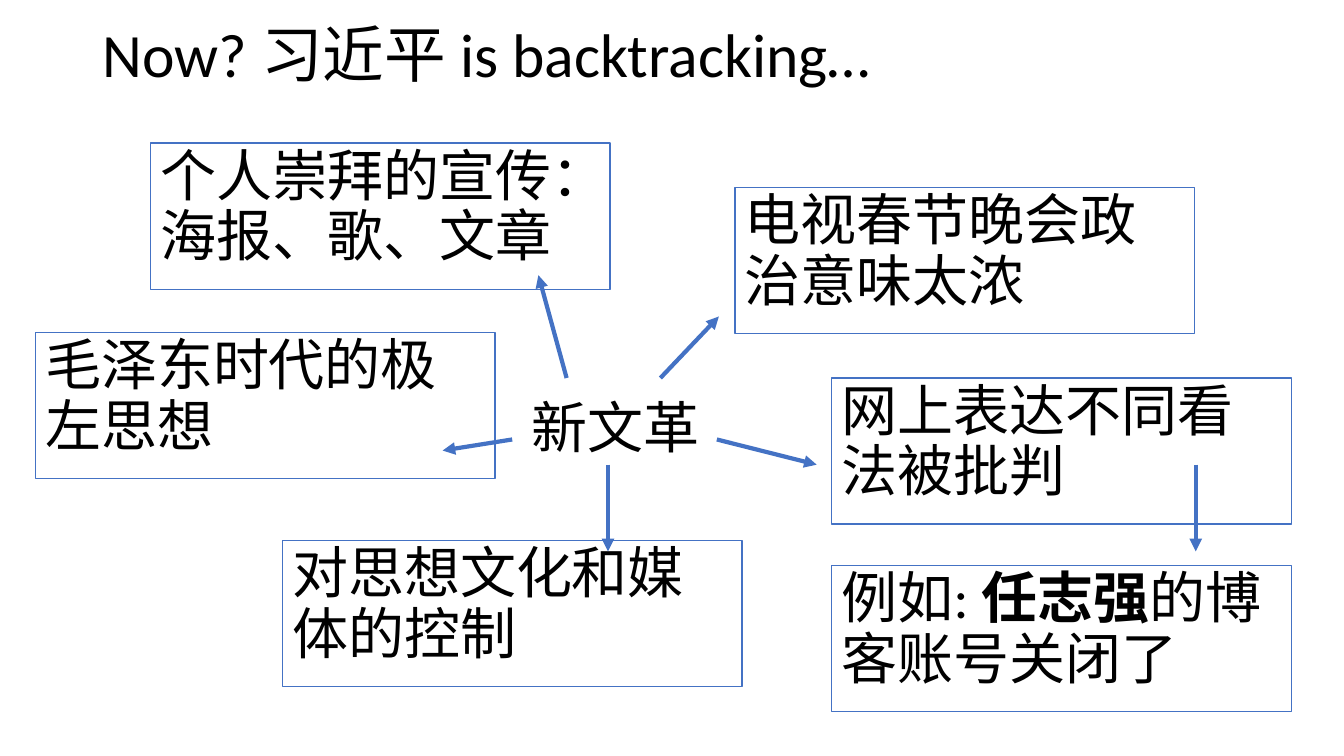
from dataclasses import dataclass

from lxml import etree
from pptx import Presentation, util as u
from pptx.dml.color import RGBColor
from pptx.enum import shapes, text
from pptx.oxml import ns

# Content: places in px, 100 px to the inch
SLIDE = (1333, 750)
TITLE = ("Now? 习近平 is backtracking…", (92, 14, 1150, 86))
CENTRE = ("新文革", (517, 392, 212, 83))
BOX_SIZE = (456, 145)
BOXES = [  # runs as (words, bold), left and top
    ([("电视春节晚会政治意味太浓", False)], (729, 186)),
    ([("网上表达不同看法被批判", False)], (825, 375)),
    ([("例如: ", False), ("任志强", True), ("的博客账号关闭了", False)], (825, 561)),
    ([("对思想文化和媒体的控制", False)], (280, 536)),
    ([("毛泽东时代的极左思想", False)], (35, 330)),
    ([("个人崇拜的宣传：海报、歌、文章", False)], (149, 142)),
]
ARROWS = [  # start, end
    ((655, 375), (713, 314)),
    ((711, 436), (810, 461)),
    ((1186, 461), (1186, 547)),
    ((603, 461), (603, 547)),
    ((508, 436), (439, 447)),
    ((562, 375), (534, 273)),
]


@dataclass(frozen=True)
class Theme:
    font: str = "Calibri"
    title_size: int = 44
    body_size: int = 40
    ink: RGBColor = RGBColor(0, 0, 0)
    paper: RGBColor = RGBColor(255, 255, 255)
    accent: RGBColor = RGBColor(0x44, 0x72, 0xC4)
    border: int = 1
    arrow: int = 3


THEME = Theme()


def px(*lengths):
    return [n * 9144 for n in lengths]


def write(s, runs, size=THEME.body_size, anchor=text.MSO_ANCHOR.TOP, before=10):
    tf = s.text_frame
    tf.word_wrap = True
    tf.vertical_anchor = anchor
    p = tf.paragraphs[0]
    p.alignment = text.PP_ALIGN.LEFT
    p.line_spacing = 0.9
    p.space_before = u.Pt(before)
    for words, bold in runs:
        r = p.add_run()
        r.text = words
        r.font.name = THEME.font
        r.font.size = u.Pt(size)
        r.font.bold = bold
        r.font.color.rgb = THEME.ink


def add_box(slide, runs, corner):
    s = slide.shapes.add_shape(shapes.MSO_SHAPE.RECTANGLE, *px(*corner, *BOX_SIZE))
    s.shadow.inherit = False
    s.fill.solid()
    s.fill.fore_color.rgb = THEME.paper
    s.line.color.rgb = THEME.accent
    s.line.width = u.Pt(THEME.border)
    write(s, runs)


def add_arrow(slide, start, end):
    s = slide.shapes.add_connector(shapes.MSO_CONNECTOR.STRAIGHT, *px(*start, *end))
    s.line.color.rgb = THEME.accent
    s.line.width = u.Pt(THEME.arrow)
    etree.SubElement(s.line._get_or_add_ln(), ns.qn("a:tailEnd"), type="triangle")
    etree.SubElement(s._element.spPr, ns.qn("a:effectLst"))


def main():
    prs = Presentation()
    prs.slide_width, prs.slide_height = px(*SLIDE)
    slide = prs.slides.add_slide(prs.slide_layouts[6])

    # Title and central idea
    words, place = TITLE
    write(slide.shapes.add_textbox(*px(*place)), [(words, False)],
          size=THEME.title_size, anchor=text.MSO_ANCHOR.MIDDLE, before=0)
    words, place = CENTRE
    write(slide.shapes.add_textbox(*px(*place)), [(words, False)])

    # Boxes around it, then the arrows on top
    for runs, corner in BOXES:
        add_box(slide, runs, corner)
    for start, end in ARROWS:
        add_arrow(slide, start, end)

    prs.save("out.pptx")


if __name__ == "__main__":
    main()
